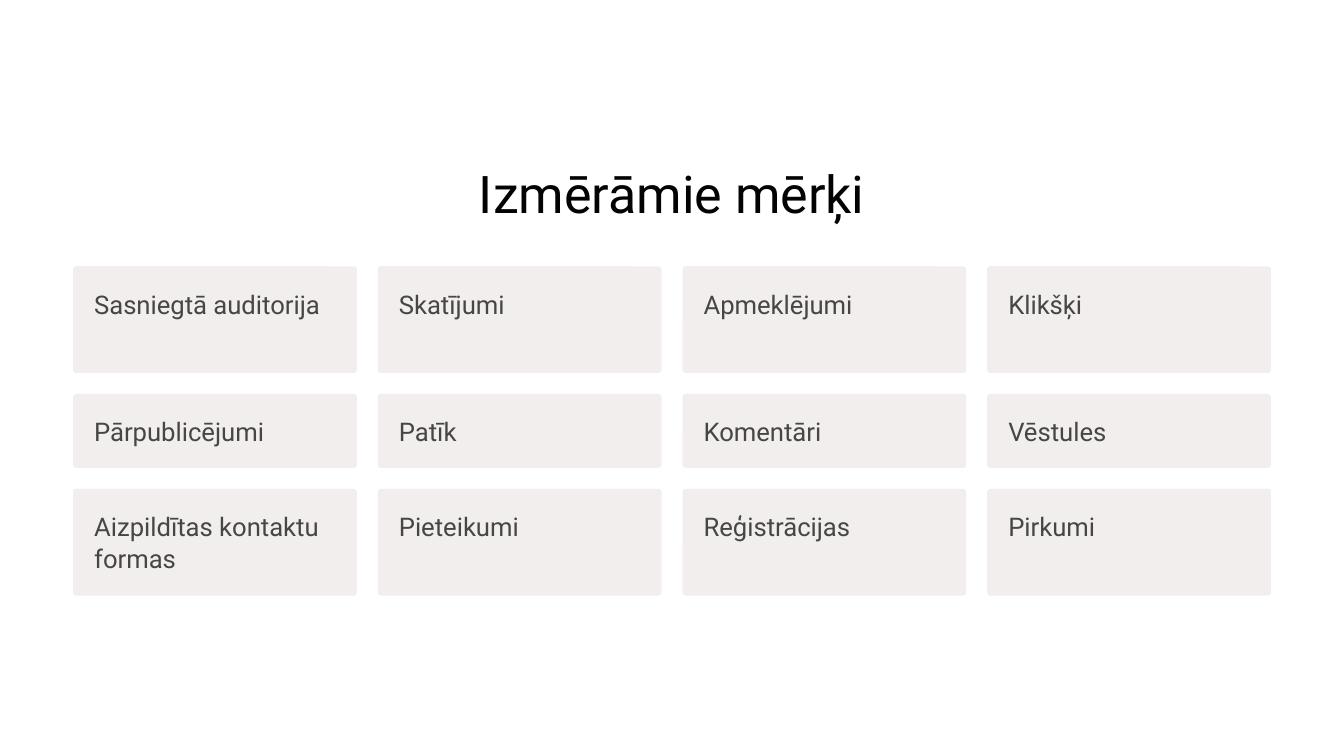
from pptx import Presentation
from pptx.dml.color import RGBColor
from pptx.enum.shapes import MSO_SHAPE as Shape
from pptx.enum.text import MSO_ANCHOR as Anchor, PP_ALIGN as Align
from pptx.util import Inches, Pt

FONT = "Roboto"
GAP = 0.25
CORNER = 0.037
CARD_INSET = 0.24
ROW_HEIGHTS = (1.27, 0.88, 1.27)
GOALS = (
    ("Sasniegtā auditorija", "Skatījumi", "Apmeklējumi", "Klikšķi"),
    ("Pārpublicējumi", "Patīk", "Komentāri", "Vēstules"),
    ("Aizpildītas kontaktu formas", "Pieteikumi", "Reģistrācijas", "Pirkumi"),
)


def color(hex_string):
    return RGBColor.from_string(hex_string)


def write(frame, text, size, line_height, ink, align, inset=0):
    frame.word_wrap = True
    frame.vertical_anchor = Anchor.TOP
    frame.margin_left = frame.margin_right = Inches(inset)
    frame.margin_top = frame.margin_bottom = Inches(inset)
    paragraph = frame.paragraphs[0]
    paragraph.text = text
    paragraph.alignment = align
    paragraph.line_spacing = Pt(line_height)
    paragraph.font.name = FONT
    paragraph.font.size = Pt(size)
    paragraph.font.color.rgb = color(ink)


def add_heading(slide, left, top, width, height):
    heading = slide.shapes.add_textbox(*map(Inches, (left, top, width, height)))
    write(heading.text_frame, "Izmērāmie mērķi", 44.5, 55.5, "030303", Align.CENTER)


def add_card(slide, goal, left, top, width, height):
    card = slide.shapes.add_shape(
        Shape.ROUNDED_RECTANGLE, *map(Inches, (left, top, width, height)))
    card.adjustments[0] = CORNER / min(width, height)
    card.shadow.inherit = False
    card.fill.solid()
    card.fill.fore_color.rgb = color("F2EEEE")
    card.line.fill.background()
    write(card.text_frame, goal, 22, 27.5, "464646", Align.LEFT, CARD_INSET)


def add_goal_grid(slide, left, top, width):
    """Lay the goals out in equal columns, with row heights that follow the text."""
    columns = len(GOALS[0])
    card_width = (width - GAP * (columns - 1)) / columns
    for goals, height in zip(GOALS, ROW_HEIGHTS):
        for column, goal in enumerate(goals):
            add_card(slide, goal, left + column * (card_width + GAP), top,
                     card_width, height)
        top += height + GAP


def main():
    deck = Presentation()
    deck.slide_width, deck.slide_height = Inches(16), Inches(9)
    slide = deck.slides.add_slide(deck.slide_layouts[6])
    slide.background.fill.solid()
    slide.background.fill.fore_color.rgb = color("FFFFFF")
    add_heading(slide, 4.9, 1.9, 6.2, 0.78)
    add_goal_grid(slide, 0.87, 3.17, 14.26)
    deck.save("out.pptx")


if __name__ == "__main__":
    main()
